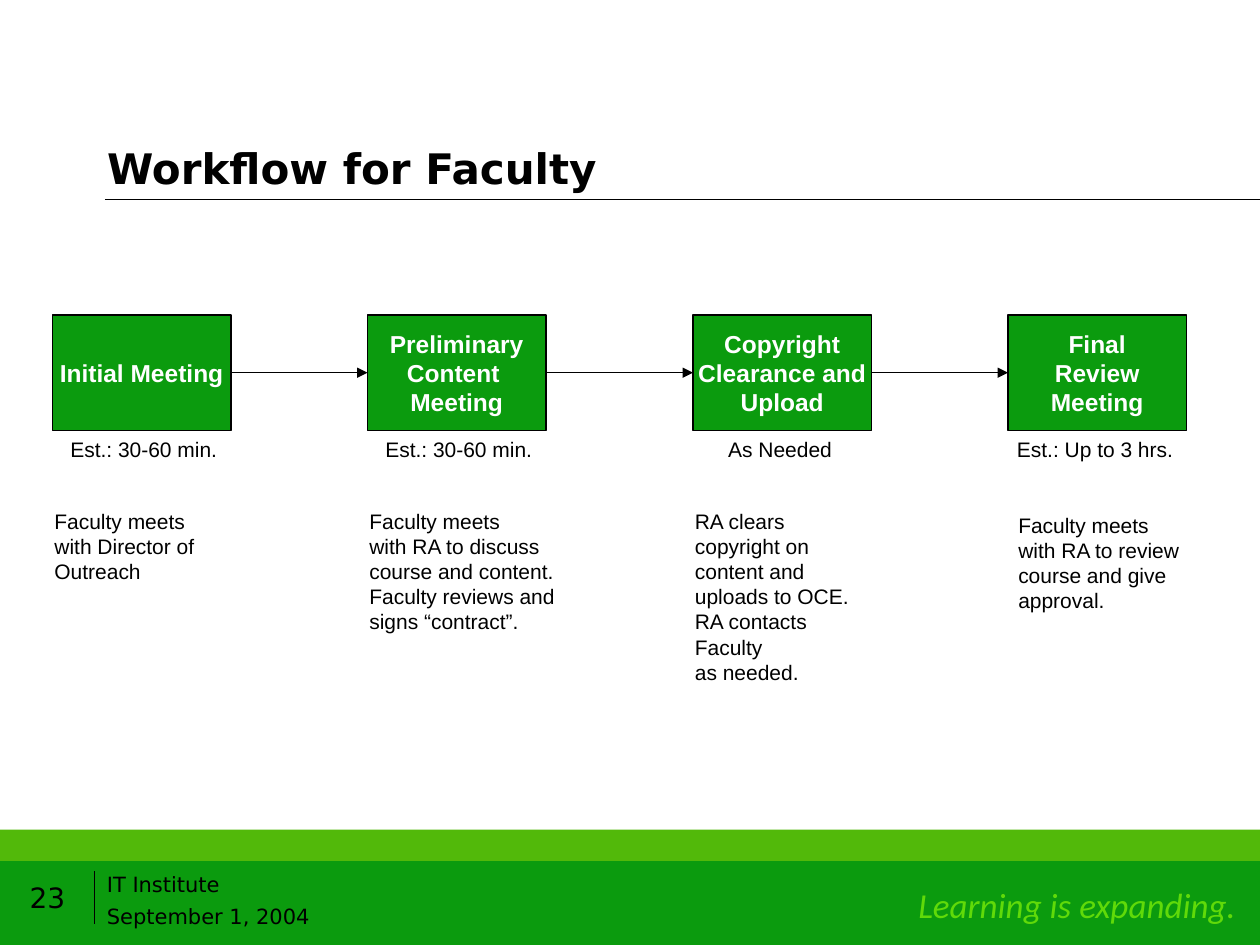
import pptx
import pptx.util
from dataclasses import dataclass
from lxml import etree
from pptx.dml.color import RGBColor
from pptx.enum.shapes import MSO_CONNECTOR, MSO_SHAPE
from pptx.enum.text import MSO_ANCHOR, MSO_AUTO_SIZE, PP_ALIGN
from pptx.oxml.ns import qn

EMU_PER_PX = 7620
SLIDE_WIDTH, SLIDE_HEIGHT = 1200, 900
STEP_WIDTH, STEP_HEIGHT = 170, 110

BLACK = RGBColor(0x00, 0x00, 0x00)
WHITE = RGBColor(0xFF, 0xFF, 0xFF)
GREEN = RGBColor(0x0B, 0x9B, 0x0E)
LIGHT_GREEN = RGBColor(0x52, 0xB9, 0x0A)
SLOGAN_GREEN = RGBColor(0x60, 0xDA, 0x09)


@dataclass
class Step:
    """One stage of the workflow; offsets are relative to its box."""
    left: int
    name: list
    estimate: str
    estimate_offset: int
    estimate_width: int
    details: list
    details_width: int
    details_offset: int = -10
    details_top: int = 178


STEPS = [
    Step(50, ["Initial Meeting"], "Est.: 30-60 min.", 3, 168,
         ["Faculty meets", "with Director of", "Outreach"], 164),
    Step(350, ["Preliminary", "Content ", "Meeting"], "Est.: 30-60 min.", 3, 168,
         ["Faculty meets", "with RA to discuss", "course and content.",
          "Faculty reviews and", "signs “contract”."], 204),
    Step(660, ["Copyright", "Clearance and", "Upload"], "As Needed", 20, 126,
         ["RA clears", "copyright on", "content and", "uploads to OCE.",
          "RA contacts Faculty", "as needed."], 200),
    Step(960, ["Final", "Review", "Meeting"], "Est.: Up to 3 hrs.", -4, 174,
         ["Faculty meets", "with RA to review", "course and give", "approval."],
         178, -2, 182),
]


def px(*lengths):
    """Turn px lengths into EMU."""
    return [pptx.util.Emu(length * EMU_PER_PX) for length in lengths]


def write(frame, lines, size, font="Arial", color=BLACK, align=PP_ALIGN.LEFT,
          anchor=MSO_ANCHOR.TOP, wrap=False, bold=False, italic=False):
    """Fill a text frame with one paragraph per line."""
    frame.word_wrap = wrap
    frame.vertical_anchor = anchor
    for index, line in enumerate(lines):
        paragraph = frame.add_paragraph() if index else frame.paragraphs[0]
        paragraph.alignment = align
        run = paragraph.add_run()
        run.text = line
        run.font.size = pptx.util.Pt(size)
        run.font.name = font
        run.font.color.rgb = color
        run.font.bold = bold
        run.font.italic = italic


def add_label(slide, box, lines, size, **style):
    """Add a text box."""
    label = slide.shapes.add_textbox(*px(*box))
    write(label.text_frame, lines, size, **style)
    return label


def add_box(slide, box, fill, outline=None):
    """Add a flat rectangle, outlined if a colour is given."""
    rectangle = slide.shapes.add_shape(MSO_SHAPE.RECTANGLE, *px(*box))
    rectangle.shadow.inherit = False
    rectangle.fill.solid()
    rectangle.fill.fore_color.rgb = fill
    if outline is None:
        rectangle.line.fill.background()
    else:
        rectangle.line.color.rgb = outline
        rectangle.line.width = pptx.util.Pt(0.75)
    return rectangle


def add_line(slide, start, end, arrow=False):
    """Add a thin black line, with an arrowhead at its end if asked."""
    line = slide.shapes.add_connector(MSO_CONNECTOR.STRAIGHT, *px(*start, *end))
    line.line.color.rgb = BLACK
    line.line.width = pptx.util.Pt(0.75)
    properties = line._element.spPr
    if arrow:
        etree.SubElement(properties.find(qn("a:ln")), qn("a:tailEnd"), type="triangle")
    etree.SubElement(properties, qn("a:effectLst"))


def add_heading(slide, left, top, width, height):
    """Place the title and the rule beneath it."""
    title = slide.shapes.title
    title.left, title.top, title.width, title.height = px(left, top, width, height)
    write(title.text_frame, ["Workflow for Faculty"], 24, font="DejaVu Sans",
          anchor=MSO_ANCHOR.BOTTOM, wrap=True, bold=True)
    title.text_frame.auto_size = MSO_AUTO_SIZE.NONE
    bottom = top + height
    add_line(slide, (left + 10, bottom), (SLIDE_WIDTH, bottom))


def add_footer(slide, left, top, width, height):
    """Draw the green bands with slogan, page number, event and date."""
    add_box(slide, (left, top, width, 90), LIGHT_GREEN)
    band = add_box(slide, (left, top + 30, width, height - 30), GREEN)
    write(band.text_frame, ["Learning is expanding."], 20, font="Calibri",
          color=SLOGAN_GREEN, align=PP_ALIGN.RIGHT, anchor=MSO_ANCHOR.MIDDLE,
          italic=True)
    band.text_frame.margin_right, band.text_frame.margin_top = px(23, 9)
    divider, text_top = left + 90, top + 40
    add_line(slide, (divider, text_top), (divider, text_top + 50))
    for row, line in enumerate(["IT Institute", "September 1, 2004"]):
        add_label(slide, (divider, text_top + 30 * row, 380, 30), [line], 12,
                  font="DejaVu Sans", anchor=MSO_ANCHOR.BOTTOM, wrap=True)
    add_label(slide, (left, text_top, 90, 50), ["23"], 16, font="DejaVu Sans",
              align=PP_ALIGN.CENTER, anchor=MSO_ANCHOR.MIDDLE, wrap=True)


def add_step(slide, step, left, top, width, height):
    """Draw one stage with its estimate and details."""
    box = add_box(slide, (left, top, width, height), GREEN, BLACK)
    write(box.text_frame, step.name, 14, color=WHITE, align=PP_ALIGN.CENTER,
          anchor=MSO_ANCHOR.MIDDLE, bold=True)
    estimate = add_label(
        slide, (left + step.estimate_offset, top + height, step.estimate_width, 36),
        [step.estimate], 12, align=PP_ALIGN.CENTER)
    details = add_label(
        slide, (left + step.details_offset, top + step.details_top,
                step.details_width, 24 * len(step.details) + 12),
        step.details, 12)
    for label in (estimate, details):
        label.text_frame.auto_size = MSO_AUTO_SIZE.SHAPE_TO_FIT_TEXT


def add_workflow(slide, top):
    """Draw all stages and the arrows between them."""
    for step in STEPS:
        add_step(slide, step, step.left, top, STEP_WIDTH, STEP_HEIGHT)
    middle = top + STEP_HEIGHT // 2
    for step, following in zip(STEPS, STEPS[1:]):
        add_line(slide, (step.left + STEP_WIDTH, middle), (following.left, middle),
                 arrow=True)


def main():
    """Build and save the slide."""
    presentation = pptx.Presentation()
    presentation.slide_width, presentation.slide_height = px(SLIDE_WIDTH, SLIDE_HEIGHT)
    slide = presentation.slides.add_slide(presentation.slide_layouts[5])
    add_footer(slide, 0, 790, SLIDE_WIDTH, 110)
    add_heading(slide, 90, 80, 1020, 110)
    add_workflow(slide, 300)
    presentation.save("out.pptx")


if __name__ == "__main__":
    main()
